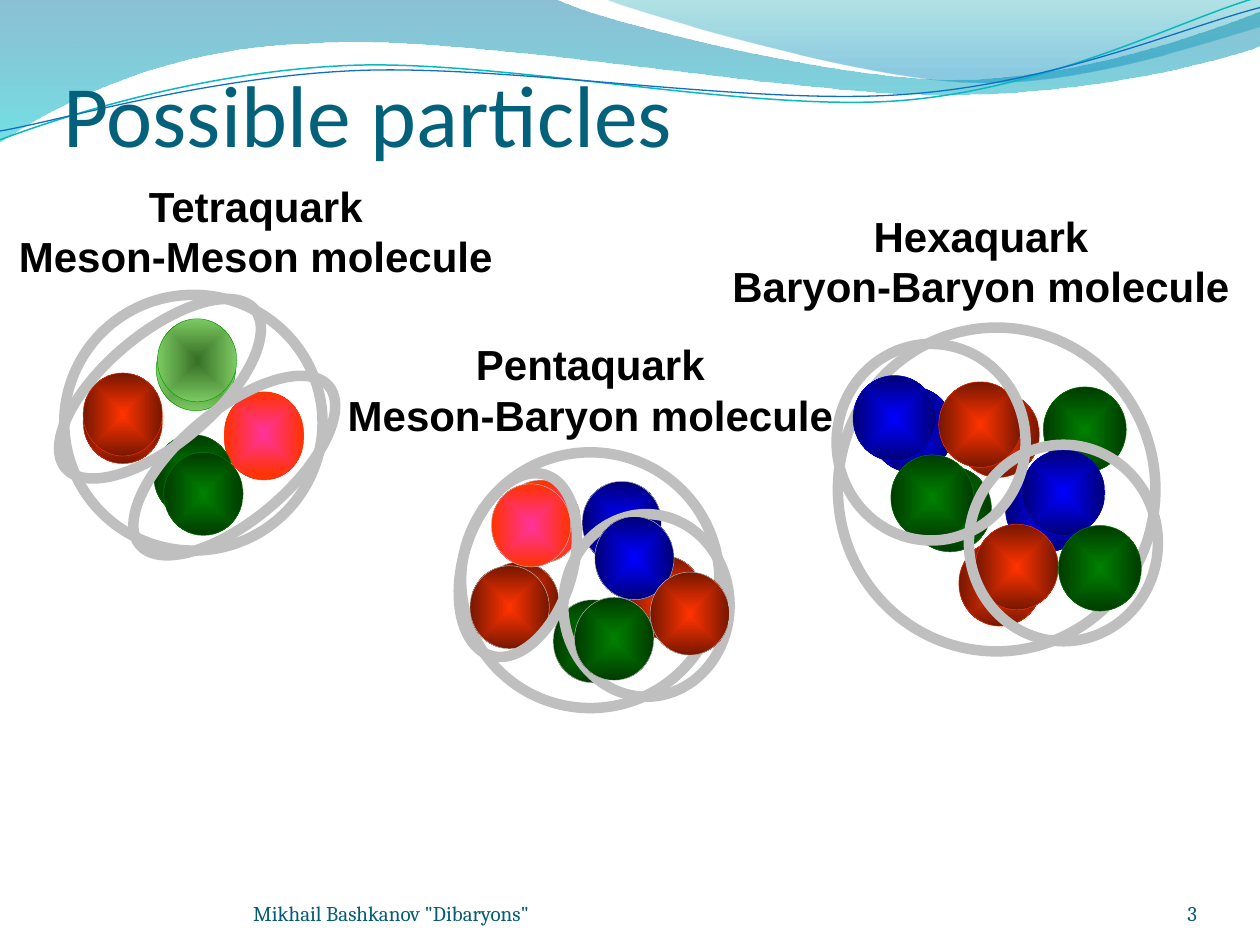
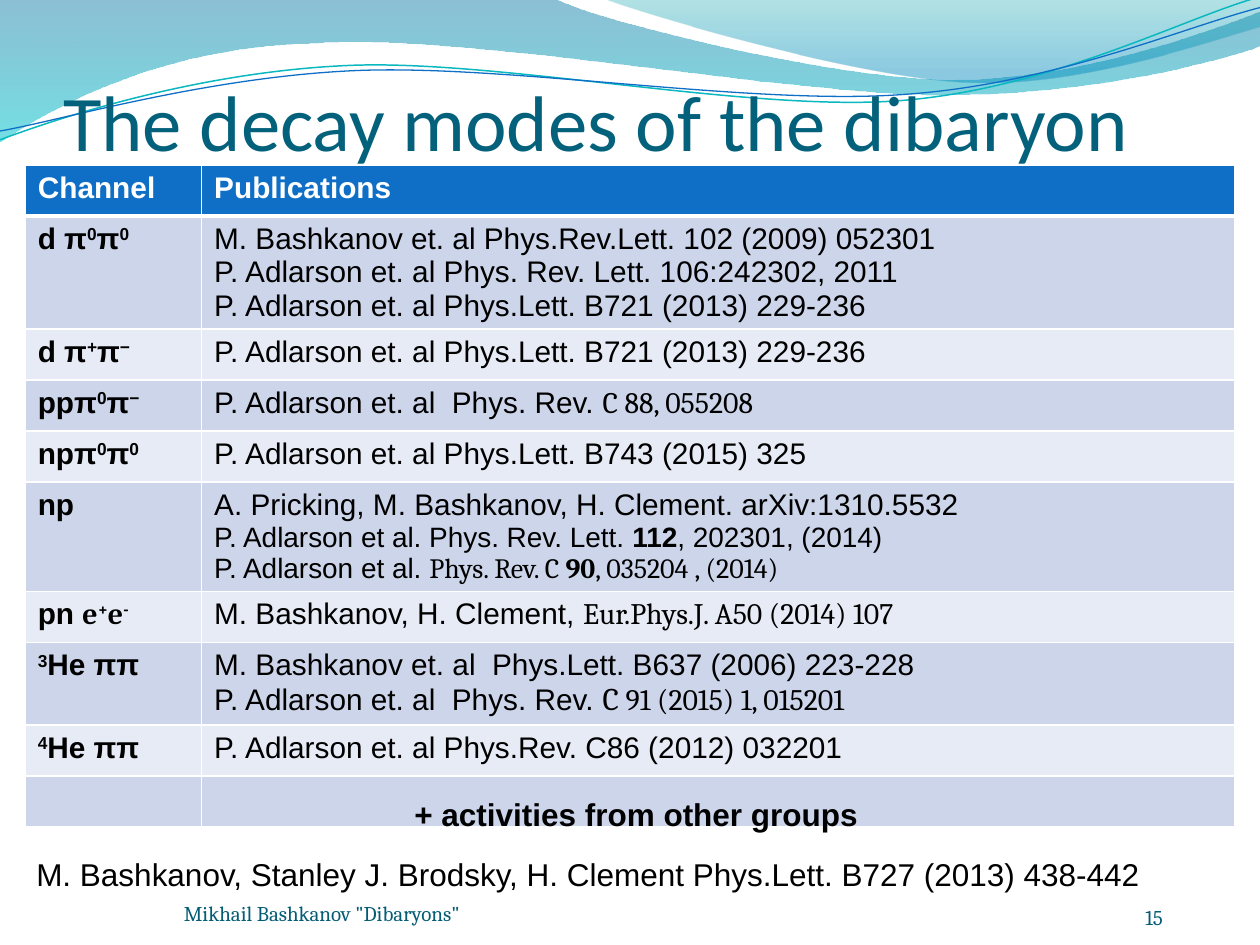
from dataclasses import dataclass
from math import cos, radians, sin

from pptx import Presentation
from pptx.dml.color import RGBColor
from pptx.enum.shapes import MSO_SHAPE
from pptx.enum.text import MSO_ANCHOR, MSO_AUTO_SIZE, PP_ALIGN
from pptx.oxml import parse_xml
from pptx.oxml.ns import nsdecls, qn
from pptx.util import Inches, Pt

OVAL = MSO_SHAPE.OVAL
LEFT, CENTER, RIGHT = PP_ALIGN.LEFT, PP_ALIGN.CENTER, PP_ALIGN.RIGHT
TOP, BOTTOM = MSO_ANCHOR.TOP, MSO_ANCHOR.BOTTOM
FIT_NONE, FIT_SHAPE = MSO_AUTO_SIZE.NONE, MSO_AUTO_SIZE.SHAPE_TO_FIT_TEXT


@dataclass(frozen=True)
class Theme:
    """Colours and type styles of the deck."""

    ring: str = "BFBFBF"
    white: str = "FFFFFF"
    header: str = "0F6FC6"
    bands: tuple = ("CCD5EA", "E7EBF5")
    title: tuple = (("name", "Calibri"), ("size", 50), ("color", "04617B"))
    footer: tuple = (("name", "Cambria"), ("size", 12), ("color", "045D75"))
    body: tuple = (("name", "Arial"), ("size", 18), ("color", "000000"))
    table: tuple = (("name", "Arial"), ("size", 17), ("color", "000000"))


THEME = Theme()
RUN_STYLES = {"bold": {"bold": True}, "sup": {"baseline": 30000}, "serif": {"name": "Cambria"},
              "small": {"size": 16}, "large": {"size": 18}}
DARKEN = '<a:gamma/><a:shade val="46275"/><a:invGamma/>'
QUARKS = {
    "red": ("FF3300", "FF3300", DARKEN, "FF3300"),
    "green": ("008000", "008000", DARKEN, "008000"),
    "blue": ("0000FF", "0000FF", DARKEN, "0000FF"),
    "pink": ("FF3399", "FF3300", "", "FF3300"),
    "lime": ("387026", "7CCA62", "", "009900"),
}
PARTICLES = [
    {"label": ["Tetraquark", "Meson-Meson molecule"], "label_box": (0.03, 1.38, 4, 0.91),
     "box": (0.51, 2.34, 2.05, 2.03), "quark_size": (0.63, 0.66), "parts": [
         ("red", 0.15, 0.68), ("pink", 1.27, 0.81), ("ring", 0, 0, 2.05, 2.03, 0),
         ("green", 0.71, 1.11), ("lime", 0.73, 0.26),
         ("red", 0.15, 0.62), ("pink", 1.27, 0.77), ("ring", -0.22, 0.31, 1.96, 0.87, 320),
         ("green", 0.79, 1.25), ("lime", 0.74, 0.19), ("ring", 0.37, 0.92, 1.96, 0.87, 320)]},
    {"label": ["Pentaquark", "Meson-Baryon molecule"], "label_box": (2.64, 2.64, 4.09, 0.91),
     "box": (3.66, 3.59, 2.05, 2.03), "quark_size": (0.63, 0.66), "outline": THEME.ring, "parts": [
         ("red", 0.15, 0.87), ("pink", 0.32, 0.22), ("ring", 0, 0, 2.05, 2.03, 0),
         ("green", 0.73, 1.17), ("blue", 0.96, 0.23), ("red", 1.29, 0.82),
         ("red", 0.07, 0.9), ("pink", 0.24, 0.25), ("ring", 0.81, 0.49, 1.32, 1.45, 0),
         ("green", 0.9, 1.15), ("blue", 1.06, 0.51), ("red", 1.5, 0.95),
         ("ring", -0.3, 0.46, 1.5, 0.87, 286.7)]},
    {"label": ["Hexaquark", "Baryon-Baryon molecule"], "label_box": (5.69, 1.62, 4.19, 0.91),
     "box": (6.65, 2.6, 2.52, 2.57), "quark_size": (0.66, 0.68), "parts": [
         ("red", 0.94, 0.51), ("green", 0.56, 1.1), ("blue", 1.33, 1.1), ("ring", 0, 0, 2.52, 2.57, 0),
         ("red", 0.96, 1.69), ("blue", 0.26, 0.47), ("green", 1.63, 0.47),
         ("red", 0.8, 0.43), ("green", 0.42, 1.01), ("blue", 1.46, 0.97),
         ("ring", -0.01, 0.13, 1.5, 1.56, 0),
         ("red", 1.09, 1.56), ("blue", 0.12, 0.38), ("green", 1.75, 1.57),
         ("ring", 1.04, 0.93, 1.5, 1.56, 0)]},
]
ZERO, PLUS, MINUS = ("0", "sup"), ("+", "sup"), ("−", "sup")
DECAYS = [
    (["d π", ZERO, "π", ZERO], [
        ["M. Bashkanov et. al Phys.Rev.Lett. 102 (2009) 052301"],
        ["P. Adlarson et. al Phys. Rev. Lett. 106:242302, 2011"],
        ["P. Adlarson et. al Phys.Lett. B721 (2013) 229-236"]]),
    (["d π", PLUS, "π", MINUS], [["P. Adlarson et. al Phys.Lett. B721 (2013) 229-236"]]),
    (["ppπ", ZERO, "π", MINUS], [["P. Adlarson et. al  Phys. Rev. ", ("C 88, 055208", "serif")]]),
    (["npπ", ZERO, "π", ZERO], [["P. Adlarson et. al Phys.Lett. B743 (2015) 325"]]),
    (["np"], [
        ["A. Pricking, M. Bashkanov, H. Clement. arXiv:1310.5532"],
        [("P. Adlarson et al. Phys. Rev. Lett. ", "small"), ("112", "small bold"),
         (", 202301, (2014)", "small")],
        [("P. Adlarson et al. ", "small"), ("Phys. Rev. C ", "small serif"),
         ("90", "small serif bold"), (", 035204 , (2014)", "small serif")]]),
    (["pn ", ("e", "serif"), ("+", "serif sup"), ("e", "serif"), ("-", "serif sup")], [
        ["M. Bashkanov, H. Clement, ", ("Eur.Phys.J. A50 (2014) 107", "serif")]]),
    ([("3", "sup"), "He ππ"], [
        ["M. Bashkanov et. al  Phys.Lett. B637 (2006) 223-228"],
        ["P. Adlarson et. al  Phys. Rev. ", ("C", "large serif"), (" 91 (2015) 1, 015201", "serif")]]),
    ([("4", "sup"), "He ππ"], [["P. Adlarson et. al Phys.Rev. C86 (2012) 032201"]]),
    ([], [[]]),
]
BANDS = [
    ((-0.01, -0.01, 10.02, 1.14),
     [(0, 0), (4.4, -0.01), (4.76, 0.17, 6.64, 0.63, 7.58, 0.63), (8.53, 0.63, 9.58, 0.26, 10, 0.09),
      (10.01, 0.36), (9.83, 0.44, 8.7, 0.76, 7.46, 0.75), (6.22, 0.75, 3.82, 0.28, 2.57, 0.34),
      (1.29, 0.36, 0.46, 0.83, -0.01, 1.13), (0, 0)],
     [(0, "0074A1", 45), (100, "00C6CF", 55)]),
    ((4.79, -0.01, 5.21, 0.7),
     [(4.79, -0.01), (5.09, 0.11, 6.82, 0.62, 7.69, 0.65), (8.56, 0.69, 9.61, 0.32, 10, 0.21),
      (10, 0), (4.79, -0.01)],
     [(0, "00A1A9", 30), (80, "008BBF", 45)]),
]
WAVES = [
    ((-0.02, 0.22, 10.02, 0.71),
     [(0, 1.11), (0.48, 0.93, 1.58, 0.57, 2.77, 0.52), (3.95, 0.47, 5.93, 0.89, 7.13, 0.8),
      (8.33, 0.71, 9.38, 0.15, 9.98, -0.02)], "0AB8BF", 0.85),
    ((-0.02, 0.3, 10.03, 0.58),
     [(0, 1.04), (0.47, 0.96, 1.64, 0.61, 2.83, 0.56), (4.03, 0.51, 5.97, 0.84, 7.17, 0.75),
      (8.36, 0.67, 9.41, 0.21, 10, 0.06)], THEME.header, 0.75),
]


def assign(target, **values):
    """Set attributes of an object from format values."""
    for key, value in values.items():
        setattr(target, key, value)


def write_text(frame, paragraphs, base, align=LEFT):
    """Fill a text frame with paragraphs made of plain or styled runs."""
    for index, runs in enumerate(paragraphs):
        paragraph = frame.add_paragraph() if index else frame.paragraphs[0]
        paragraph.alignment = align
        for item in runs:
            text, styles = (item, "") if isinstance(item, str) else item
            values = dict(base)
            for style in styles.split():
                values.update(RUN_STYLES[style])
            run = paragraph.add_run()
            run.text = text
            run.font.color.rgb = RGBColor.from_string(values.pop("color"))
            if "baseline" in values:
                run._r.get_or_add_rPr().set("baseline", str(values.pop("baseline")))
            assign(run.font, **{**values, "size": Pt(values["size"])})


def add_text(slide, box, paragraphs, base, align=LEFT, **values):
    """Add a text box in the given box."""
    frame = slide.shapes.add_textbox(*map(Inches, box)).text_frame
    assign(frame, **{"word_wrap": False, "auto_size": FIT_SHAPE, "vertical_anchor": TOP, **values})
    write_text(frame, paragraphs, base, align)


def set_gradient(shape, stops, direction):
    """Give a shape a gradient made of position, colour and modifier stops."""
    shape.fill.solid()
    properties = shape._element.spPr
    stop_xml = "".join(f'<a:gs pos="{position * 1000}"><a:srgbClr val="{color}">{effect}</a:srgbClr></a:gs>'
                       for position, color, effect in stops)
    gradient = parse_xml(f'<a:gradFill {nsdecls("a")} rotWithShape="1">'
                         f"<a:gsLst>{stop_xml}</a:gsLst>{direction}</a:gradFill>")
    properties.replace(properties.find(qn("a:solidFill")), gradient)


def set_line(shape, color, width):
    """Set the outline of a shape and drop its shadow."""
    shape.shadow.inherit = False
    shape.line.color.rgb = RGBColor.from_string(color)
    shape.line.width = Pt(width)


def add_curve(slide, box, segments, rotation=0):
    """Add a freeform of lines and cubic curves, given as drawn after rotation."""
    left, top, width, height = box
    builder = slide.shapes.build_freeform(Inches(left), Inches(top))
    builder.add_line_segments([(Inches(left + width), Inches(top + height))], close=False)
    shape = builder.convert_to_shape()
    shape.rotation = rotation
    cosine, sine = cos(radians(rotation)), sin(radians(rotation))
    commands = ""
    for index, segment in enumerate(segments):
        tag = "cubicBezTo" if len(segment) == 6 else "lnTo" if index else "moveTo"
        points = ""
        for x, y in zip(segment[::2], segment[1::2]):
            across, down = x - left - width / 2, y - top - height / 2
            local_x = Inches(width / 2 + across * cosine + down * sine)
            local_y = Inches(height / 2 - across * sine + down * cosine)
            points += f'<a:pt x="{local_x}" y="{local_y}"/>'
        commands += f"<a:{tag}>{points}</a:{tag}>"
    if segments[0] == segments[-1]:
        commands += "<a:close/>"
    outline = next(shape._element.iter(qn("a:path")))
    outline[:] = list(parse_xml(f'<a:path {nsdecls("a")}>{commands}</a:path>'))
    return shape


def add_wave_background(slide):
    """Build the top waves and place them on the shared layout."""
    shapes = []
    for box, segments, stops in BANDS:
        shape = add_curve(slide, box, segments)
        set_gradient(shape, [(position, color, f'<a:alpha val="{opacity * 1000}"/>')
                             for position, color, opacity in stops],
                     '<a:lin ang="5400000" scaled="1"/>')
        shape.shadow.inherit = False
        shape.line.fill.background()
        shapes.append(shape)
    for box, segments, color, width in WAVES:
        shape = add_curve(slide, box, segments, 357.3)
        shape.fill.background()
        set_line(shape, color, width)
        shapes.append(shape)
    tree = slide.slide_layout.shapes._spTree
    for index, shape in enumerate(shapes):
        shape._element.nvSpPr.cNvPr.set("id", str(100 + index))
        tree.insert(2 + index, shape._element)


def add_title(slide, text, box, size):
    """Move and format the title placeholder."""
    title = slide.shapes.title
    assign(title, **dict(zip(("left", "top", "width", "height"), map(Inches, box))))
    assign(title.text_frame, vertical_anchor=BOTTOM, auto_size=FIT_NONE, margin_left=0,
           margin_right=0, margin_top=Inches(0.05), margin_bottom=0)
    write_text(title.text_frame, [[text]], {**dict(THEME.title), "size": size})


def add_footer(slide, footer_box, number, number_box, number_align):
    """Add the author line and the slide number."""
    for text, box, align in (('Mikhail Bashkanov "Dibaryons"', footer_box, LEFT),
                             (number, number_box, number_align)):
        add_text(slide, box, [[text]], THEME.footer, align, word_wrap=True, auto_size=FIT_NONE,
                 vertical_anchor=BOTTOM, margin_left=0, margin_right=0, margin_top=0, margin_bottom=0)


def add_particle(slide, box, label, label_box, quark_size, parts, outline=None):
    """Draw a labelled group of quarks and rings relative to its box."""
    add_text(slide, label_box, [[line] for line in label],
             {**dict(THEME.body), "size": 24, "bold": True}, CENTER)
    group = slide.shapes.add_group_shape()
    for kind, x, y, *ring in parts:
        width, height, rotation = ring or (*quark_size, 0)
        shape = group.shapes.add_shape(OVAL, *map(Inches, (box[0] + x, box[1] + y, width, height)))
        shape.rotation = rotation
        if kind == "ring":
            shape.fill.background()
            set_line(shape, THEME.ring, 6)
            continue
        core, edge, effect, line = QUARKS[kind]
        set_gradient(shape, [(0, core, ""), (100, edge, effect)],
                     '<a:path path="shape"><a:fillToRect l="50000" t="50000" r="50000" b="50000"/></a:path>')
        set_line(shape, outline or line, 0.25)


def add_decay_table(slide, left, top, widths, row_height):
    """Add the table of decay channels and publications."""
    rows = [(["Channel"], [["Publications"]])] + DECAYS
    table = slide.shapes.add_table(len(rows), 2, Inches(left), Inches(top), Inches(sum(widths)),
                                   row_height * len(rows)).table
    for column, width in zip(table.columns, widths):
        column.width = Inches(width)
    for index, (channel, publications) in enumerate(rows):
        header = index == 0
        fill = THEME.header if header else THEME.bands[(index - 1) % 2]
        base = {**dict(THEME.table), **({"color": THEME.white} if header else {})}
        for column, paragraphs in enumerate(([channel], publications)):
            cell = table.cell(index, column)
            for side, width in zip("LRTB", (1, 1, 1, 3) if header else ()):
                cell._tc.get_or_add_tcPr().append(parse_xml(
                    f'<a:ln{side} {nsdecls("a")} w="{Pt(width)}"><a:solidFill>'
                    f'<a:srgbClr val="{THEME.white}"/></a:solidFill></a:ln{side}>'))
            cell.fill.solid()
            cell.fill.fore_color.rgb = RGBColor.from_string(fill)
            write_text(cell.text_frame, paragraphs, {**base, "bold": header or column == 0})


def build_particles_slide(slide):
    """Build the slide of possible particles."""
    add_title(slide, "Possible particles", (0.5, 0.3, 9, 1.01), 50)
    for particle in PARTICLES:
        add_particle(slide, **particle)
    add_footer(slide, (2.01, 6.95, 4.58, 0.4), "3", (8.67, 6.95, 0.83, 0.4), RIGHT)


def build_decay_slide(slide):
    """Build the slide of decay modes."""
    add_title(slide, "The decay modes of the dibaryon", (0.5, 0.08, 9, 1.25), 45)
    add_decay_table(slide, 0.2, 1.31, (1.4, 8.2), Pt(29.2))
    add_text(slide, (3.19, 6.26, 3.83, 0.4), [["+ activities from other groups"]],
             {**dict(THEME.body), "bold": True})
    add_text(slide, (0.19, 6.74, 9.04, 0.71),
             [["M. Bashkanov, Stanley J. Brodsky, H. Clement Phys.Lett. B727 (2013) 438-442"]], THEME.body)
    add_footer(slide, (1.46, 6.95, 5.13, 0.4), "15", (9.09, 6.98, 0.64, 0.4), LEFT)


def main():
    """Build and save the presentation."""
    presentation = Presentation()
    assign(presentation, slide_width=Inches(10), slide_height=Inches(7.5))
    slides = [presentation.slides.add_slide(presentation.slide_layouts[5]) for _ in range(2)]
    add_wave_background(slides[0])
    build_particles_slide(slides[0])
    build_decay_slide(slides[1])
    presentation.save("out.pptx")


if __name__ == "__main__":
    main()
